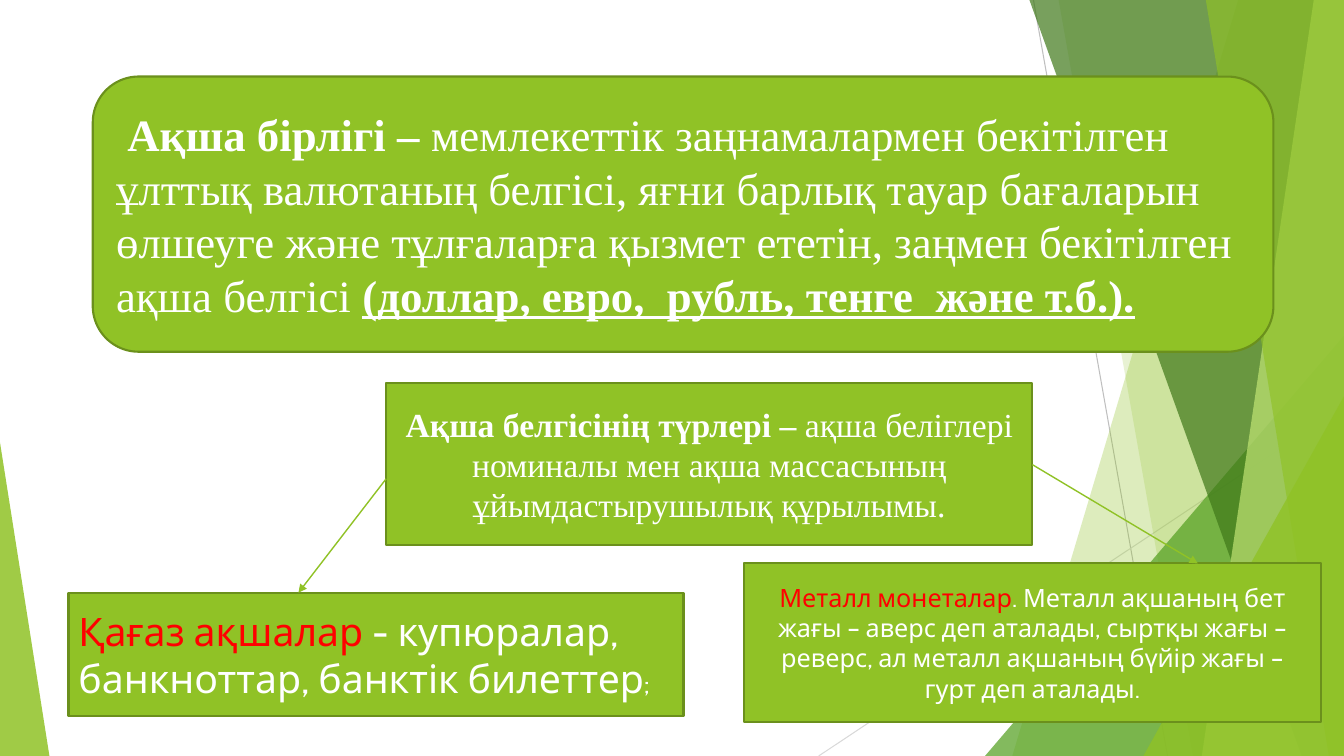
"""Build a slide on the currency unit and the kinds of money."""
import pptx
import pptx.util
import pptx.dml.color
import pptx.enum.shapes
import pptx.enum.text
import pptx.oxml

RGB = pptx.dml.color.RGBColor
SHAPE = pptx.enum.shapes.MSO_SHAPE
ALIGN = pptx.enum.text.PP_ALIGN
LINE = pptx.enum.shapes.MSO_CONNECTOR.STRAIGHT

PX = 9144
WIDE, HIGH = 1333, 750

LIME = RGB(0x90, 0xC2, 0x26)
LEAF = RGB(0x54, 0xA0, 0x21)
PINE = RGB(0x3F, 0x78, 0x19)
PALE = RGB(0xC0, 0xE4, 0x74)
EDGE = RGB(0x6B, 0x90, 0x1C)
GREY = RGB(0xBF, 0xBF, 0xBF)
MIST = RGB(0xD9, 0xD9, 0xD9)
WHITE = RGB(0xFF, 0xFF, 0xFF)
RED = RGB(0xFF, 0x00, 0x00)

SERIF, SANS = "Times New Roman", "Cabin"

RAYS = [((1025, 0), (1158, HIGH), GREY), ((WIDE, 403), (812, HIGH), MIST)]

# top x, bottom x, top y, colour, opacity
BANDS = [
    (1228, 1004, 0, LIME, 30),
    (1050, 1183, 0, LIME, 20),
    (WIDE, 977, 333, LEAF, 72),
    (1021, 1291, 0, PINE, 70),
    (1303, 1192, 0, PALE, 70),
    (1196, 1318, 0, LIME, 65),
    (WIDE, 1134, 393, LIME, 80),
]
WEDGE = (0, 439, 49, 311)

BOXES = [
    (SHAPE.ROUNDED_RECTANGLE, (92, 76, 1171, 273), ALIGN.LEFT, SERIF, 32, [
        (" Ақша бірлігі – ", WHITE, {"bold": True}),
        ("мемлекеттік заңнамалармен бекітілген ұлттық валютаның белгісі, "
         "яғни барлық тауар бағаларын өлшеуге және тұлғаларға қызмет ететін, "
         "заңмен бекітілген ақша белгісі ", WHITE, {}),
        ("(доллар, евро,  рубль, тенге  және т.б.).", WHITE,
         {"bold": True, "underline": True}),
    ]),
    (SHAPE.RECTANGLE, (383, 380, 641, 161), ALIGN.CENTER, SERIF, 24, [
        ("Ақша белгісінің түрлері – ", WHITE, {"bold": True}),
        ("ақша беліглері номиналы мен ақша массасының "
         "ұйымдастырушылық құрылымы.", WHITE, {}),
    ]),
    (SHAPE.RECTANGLE, (68, 588, 610, 122), ALIGN.LEFT, SANS, 28, [
        ("Қағаз ақшалар ", RED, {}),
        ("- купюралар, банкноттар, банктік билеттер", WHITE, {}),
        (";", WHITE, {"size": pptx.util.Pt(18)}),
    ]),
    (SHAPE.RECTANGLE, (738, 559, 572, 157), ALIGN.CENTER, SANS, 18, [
        ("Металл монеталар", RED, {}),
        (". Металл ақшаның бет жағы – аверс деп аталады, сыртқы жағы – "
         "реверс, ал металл ақшаның бүйір жағы – гурт деп аталады.", WHITE, {}),
    ]),
]

ARROWS = [((383, 475), (296, 588)), ((1024, 461), (1188, 559))]


def make(tag, **attrs):
    node = pptx.oxml.parse_xml(
        f'<a:{tag} xmlns:a="http://schemas.openxmlformats.org/drawingml/2006/main"/>')
    for name, value in attrs.items():
        node.set(name, value)
    return node


def paint(shape, color, alpha=100):
    shape.shadow.inherit = False
    shape.fill.solid()
    shape.fill.fore_color.rgb = color
    shape.line.fill.background()
    if alpha < 100:
        tint = shape.fill._xPr.solidFill[0]
        tint.append(make("alpha", val=str(alpha * 1000)))


def add_line(slide, start, end, color, width, arrow=False):
    line = slide.shapes.add_connector(LINE, *(n * PX for n in start + end))
    line.line.color.rgb = color
    line.line.width = pptx.util.Pt(width)
    if arrow:
        line.line._get_or_add_ln().append(make("tailEnd", type="triangle"))
    line._element.spPr.append(make("effectLst"))


def add_band(slide, top, base, rise, color, alpha):
    pen = slide.shapes.build_freeform(top, rise, scale=PX)
    right = [(WIDE, rise)] if top < WIDE else []
    pen.add_line_segments(right + [(WIDE, HIGH), (base, HIGH)], close=True)
    paint(pen.convert_to_shape(), color, alpha)


def add_box(slide, kind, place, align, face, size, runs):
    box = slide.shapes.add_shape(kind, *(n * PX for n in place))
    paint(box, LIME)
    box.line.color.rgb = EDGE
    box.line.width = pptx.util.Pt(1.5)
    frame = box.text_frame
    frame.word_wrap = True
    frame.vertical_anchor = pptx.enum.text.MSO_ANCHOR.MIDDLE
    para = frame.paragraphs[0]
    para.alignment = align
    para.font.name = face
    para.font.size = pptx.util.Pt(size)
    for text, color, style in runs:
        run = para.add_run()
        run.text = text
        run.font.color.rgb = color
        for name, value in style.items():
            setattr(run.font, name, value)


def main():
    deck = pptx.Presentation()
    deck.slide_width, deck.slide_height = WIDE * PX, HIGH * PX
    slide = deck.slides.add_slide(deck.slide_layouts[6])
    for start, end, color in RAYS:
        add_line(slide, start, end, color, 0.75)
    for band in BANDS:
        add_band(slide, *band)
    wedge = slide.shapes.add_shape(
        SHAPE.ISOSCELES_TRIANGLE, *(n * PX for n in WEDGE))
    wedge.adjustments[0] = 0
    paint(wedge, LIME, 85)
    for box in BOXES:
        add_box(slide, *box)
    for start, end in ARROWS:
        add_line(slide, start, end, LIME, 1, arrow=True)
    deck.save("out.pptx")


if __name__ == "__main__":
    main()
